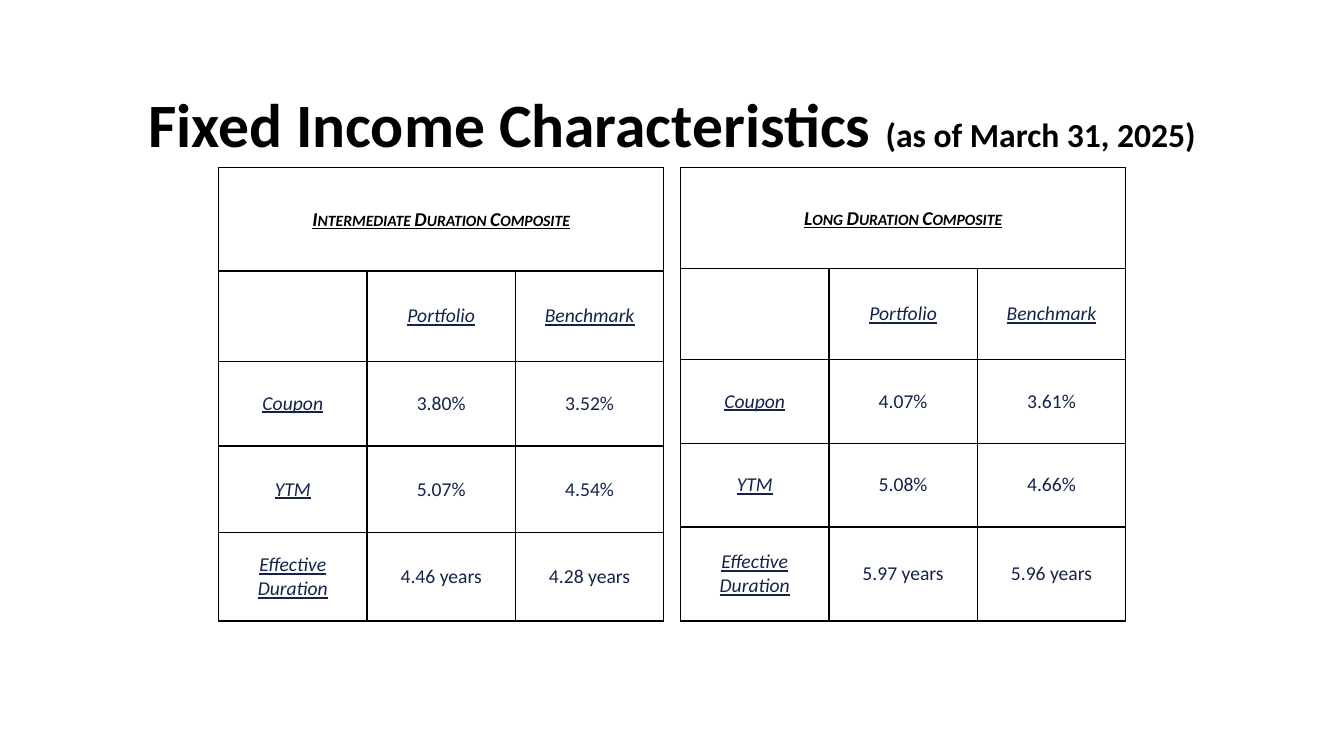
from dataclasses import dataclass

import pptx
import pptx.dml.color
import pptx.enum.text
import pptx.oxml
import pptx.oxml.ns
import pptx.slide
import pptx.table
import pptx.util

Cm = pptx.util.Cm
Pt = pptx.util.Pt
CENTER = pptx.enum.text.PP_ALIGN.CENTER
MIDDLE = pptx.enum.text.MSO_ANCHOR.MIDDLE

COLORS = {"black": "000000", "navy": "15234A"}
FONT = "Calibri"
TABLE_TOP = 4.23
COLUMN_WIDTH = 3.74
HEADINGS = ("", "Portfolio", "Benchmark")


@dataclass
class Composite:
    name: str
    left: float
    row_heights: tuple[float, ...]
    rows: tuple[tuple[str, str, str], ...]


COMPOSITES = (
    Composite(
        "Intermediate Duration Composite", 5.51, (2.6, 2.27, 2.14, 2.18, 2.23),
        (
            ("Coupon", "3.80%", "3.52%"),
            ("YTM", "5.07%", "4.54%"),
            ("Effective Duration", "4.46 years", "4.28 years"),
        ),
    ),
    Composite(
        "Long Duration Composite", 17.15, (2.54, 2.29, 2.11, 2.11, 2.37),
        (
            ("Coupon", "4.07%", "3.61%"),
            ("YTM", "5.08%", "4.66%"),
            ("Effective Duration", "5.97 years", "5.96 years"),
        ),
    ),
)


def rgb(name: str) -> pptx.dml.color.RGBColor:
    return pptx.dml.color.RGBColor.from_string(COLORS[name])


def add_title(s: pptx.slide.Slide) -> None:
    sp = s.shapes.add_textbox(Cm(2.33), Cm(1.9), Cm(29.21), Cm(2.62))
    tf = sp.text_frame
    tf.word_wrap = True
    tf.vertical_anchor = MIDDLE
    p = tf.paragraphs[0]
    p.alignment = CENTER
    p.line_spacing = 0.9
    p.font.name = FONT
    p.font.bold = True
    p.font.color.rgb = rgb("black")
    for text, size in (("Fixed Income Characteristics ", 44), ("(as of March 31, 2025)", 24)):
        r = p.add_run()
        r.text = text
        r.font.size = Pt(size)


def format_cell(cell: pptx.table._Cell) -> None:
    """Give the cell thin black borders on all sides and no fill."""
    tcPr = cell._tc.get_or_add_tcPr()
    for side in ("lnL", "lnR", "lnT", "lnB"):
        tcPr.append(pptx.oxml.parse_xml(
            f'<a:{side} {pptx.oxml.ns.nsdecls("a")} w="{Pt(1)}"><a:solidFill>'
            f'<a:srgbClr val="{COLORS["black"]}"/></a:solidFill></a:{side}>'
        ))
    cell.fill.background()
    cell.vertical_anchor = MIDDLE


def write_cell(cell: pptx.table._Cell, text: str, color: str, is_label: bool) -> None:
    """Labels are italic and underlined, values are plain."""
    p = cell.text_frame.paragraphs[0]
    p.alignment = CENTER
    p.font.name = FONT
    p.font.size = Pt(14)
    p.font.italic = p.font.underline = is_label
    p.font.color.rgb = rgb(color)
    if text:
        p.add_run().text = text


def add_composite(s: pptx.slide.Slide, composite: Composite) -> None:
    table = s.shapes.add_table(
        len(composite.row_heights), len(HEADINGS), Cm(composite.left), Cm(TABLE_TOP),
        Cm(COLUMN_WIDTH * len(HEADINGS)), Cm(sum(composite.row_heights)),
    ).table
    table.first_row = table.horz_banding = False
    for column in table.columns:
        column.width = Cm(COLUMN_WIDTH)
    for row, height in zip(table.rows, composite.row_heights):
        row.height = Cm(height)
    for cell in table.iter_cells():
        format_cell(cell)

    header = table.cell(0, 0)
    header.merge(table.cell(0, len(HEADINGS) - 1))
    write_cell(header, composite.name, "black", True)
    p = header.text_frame.paragraphs[0]
    p.font.bold = True
    p.runs[0]._r.get_or_add_rPr().set("cap", "small")

    for i, texts in enumerate((HEADINGS, *composite.rows), start=1):
        for j, text in enumerate(texts):
            write_cell(table.cell(i, j), text, "navy", i == 1 or j == 0)


def main() -> None:
    prs = pptx.Presentation()
    prs.slide_width, prs.slide_height = Cm(33.87), Cm(19.05)
    s = prs.slides.add_slide(prs.slide_layouts[6])
    add_title(s)
    for composite in COMPOSITES:
        add_composite(s, composite)
    prs.save("out.pptx")


if __name__ == "__main__":
    main()
